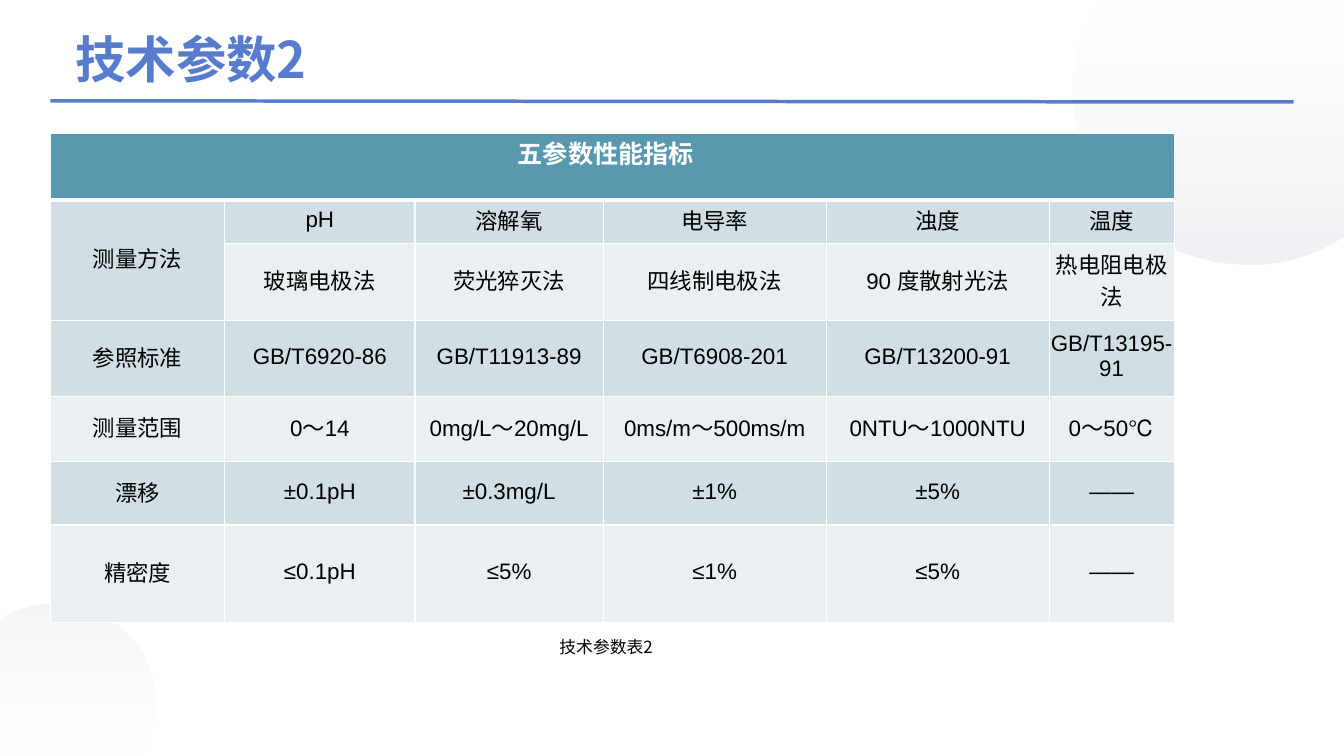
import math

import pptx
import pptx.dml.color
import pptx.enum.shapes
import pptx.enum.text
import pptx.oxml.ns
import pptx.util
from pptx.util import Cm, Pt

TITLE = "技术参数2"
CAPTION = "技术参数表2"
TABLE_HEADING = "五参数性能指标"
PARAMETERS = [
    ("测量方法", "pH", "溶解氧", "电导率", "浊度", "温度"),
    ("", "玻璃电极法", "荧光猝灭法", "四线制电极法", "90 度散射光法", "热电阻电极法"),
    ("参照标准", "GB/T6920-86", "GB/T11913-89", "GB/T6908-201", "GB/T13200-91", "GB/T13195-91"),
    ("测量范围", "0～14", "0mg/L～20mg/L", "0ms/m～500ms/m", "0NTU～1000NTU", "0～50℃"),
    ("漂移", "±0.1pH", "±0.3mg/L", "±1%", "±5%", "——"),
    ("精密度", "≤0.1pH", "≤5%", "≤1%", "≤5%", "——"),
]
COLUMN_WIDTHS = (4.39, 4.8, 4.74, 5.62, 5.62, 3.15)
ROW_HEIGHTS = (1.68, 1.09, 1.94, 1.93, 1.63, 1.6, 2.46)

SLIDE_W, SLIDE_H = 33.87, 19.05
MARGIN = 1.27
BLUE, TEAL, WHITE, BLACK = "577CCE", "5999AF", "FFFFFF", "000000"
BANDS = ("EAEFF2", "D1DEE3")
SANS, CJK = "Arial", "Noto Sans CJK SC"
# centre, radii, arc angles, slide corner, gradient stops (colour, opacity %)
CORNER_DISCS = [
    ((31.44, 2.34), (4.41, 4.33), (56.6, 90, 180, 212.7), (SLIDE_W, 0),
     ((WHITE, 10), ("BEBED2", 24))),
    ((1.4, 17.7), (2.53, 2.48), (236.4, 270, 360, 393), (0, SLIDE_H),
     (("D8D8E4", 24), (WHITE, 10))),
]


def rgb(value):
    return pptx.dml.color.RGBColor.from_string(value)


def add_child(parent, tag, **attributes):
    child = parent.makeelement(pptx.oxml.ns.qn(tag), attributes)
    parent.append(child)
    return child


def format_text(paragraph, size, color, latin=SANS, bold=False):
    for run in paragraph.runs:
        font = run.font
        font.size, font.bold, font.name = Pt(size), bold, latin
        font.color.rgb = rgb(color)
        add_child(run._r.get_or_add_rPr(), "a:ea", typeface=CJK)


def arc_points(centre, radii, angles):
    """Return the start of an arc, then two handles and an end per segment."""
    def place(x, y):
        x, y = centre[0] + radii[0] * x, centre[1] + radii[1] * y
        return Cm(min(max(x, 0), SLIDE_W)), Cm(min(max(y, 0), SLIDE_H))

    turns = [math.radians(angle) for angle in angles]
    points = [place(math.cos(turns[0]), math.sin(turns[0]))]
    for a, b in zip(turns, turns[1:]):
        k = 4 / 3 * math.tan((b - a) / 4)
        points += [
            place(math.cos(a) - k * math.sin(a), math.sin(a) + k * math.cos(a)),
            place(math.cos(b) + k * math.sin(b), math.sin(b) - k * math.cos(b)),
            place(math.cos(b), math.sin(b)),
        ]
    return points


def curve_segments(outline, count):
    """Turn each three leading line segments of an outline into one curve."""
    lines = list(outline.iter(pptx.oxml.ns.qn("a:lnTo")))[:3 * count]
    for i in range(0, len(lines), 3):
        curve = add_child(lines[i].getparent(), "a:cubicBezTo")
        lines[i].addprevious(curve)
        for line in lines[i:i + 3]:
            curve.append(line[0])
            line.getparent().remove(line)


def add_corner_disc(slide, centre, radii, angles, corner, stops):
    """Draw the part of an ellipse that lies inside a corner of the slide."""
    start, *arc = arc_points(centre, radii, angles)
    builder = slide.shapes.build_freeform(*start)
    builder.add_line_segments(arc + [(Cm(corner[0]), Cm(corner[1]))], close=True)
    disc = builder.convert_to_shape()
    curve_segments(disc._element.spPr, len(angles) - 1)
    disc.shadow.inherit = False
    disc.line.fill.background()
    disc.fill.gradient()
    disc.fill.gradient_angle = 270
    for stop, (color, opacity) in zip(disc.fill.gradient_stops, stops):
        stop.color.rgb = rgb(color)
        add_child(stop._gs[0], "a:alpha", val=str(opacity * 1000))


def set_borders(cell, bottom=1):
    """Put white borders around a cell; they precede the fill in the XML."""
    properties = cell._tc.get_or_add_tcPr()
    widths = {"a:lnL": 1, "a:lnR": 1, "a:lnT": 1, "a:lnB": bottom}
    for position, (tag, width) in enumerate(widths.items()):
        border = add_child(properties, tag, w=str(Pt(width)))
        add_child(add_child(border, "a:solidFill"), "a:srgbClr", val=WHITE)
        properties.insert(position, border)


def add_parameter_table(slide):
    rows = [(TABLE_HEADING,) + ("",) * (len(COLUMN_WIDTHS) - 1)] + PARAMETERS
    table = slide.shapes.add_table(
        len(rows), len(COLUMN_WIDTHS), Cm(MARGIN), Cm(3.36),
        Cm(sum(COLUMN_WIDTHS)), Cm(sum(ROW_HEIGHTS))).table
    for column, width in zip(table.columns, COLUMN_WIDTHS):
        column.width = Cm(width)
    for row, height in zip(table.rows, ROW_HEIGHTS):
        row.height = Cm(height)
    for r, values in enumerate(rows):
        heading = r == 0
        for c, value in enumerate(values):
            cell = table.cell(r, c)
            cell.margin_left = cell.margin_top = Cm(0.03)
            cell.margin_right = Cm(0.35 if heading else 0.03)
            cell.margin_bottom = Cm(0.13)
            cell.fill.solid()
            cell.fill.fore_color.rgb = rgb(TEAL if heading else BANDS[r % 2])
            set_borders(cell, bottom=3 if heading else 1)
            cell.text_frame.text = value
            paragraph = cell.text_frame.paragraphs[0]
            paragraph.alignment = pptx.enum.text.PP_ALIGN.CENTER
            if heading:
                paragraph.space_before = Pt(6)
                format_text(paragraph, 18, WHITE, bold=True)
            else:
                cell.vertical_anchor = pptx.enum.text.MSO_ANCHOR.MIDDLE
                format_text(paragraph, 16, BLACK)
    table.cell(0, 0).merge(table.cell(0, len(COLUMN_WIDTHS) - 1))
    table.cell(1, 0).merge(table.cell(2, 0))


def add_title(slide):
    title = slide.shapes.title
    title.left, title.top, title.width, title.height = Cm(1.9), Cm(0.62), Cm(31.32), Cm(1.7)
    frame = title.text_frame
    frame.text = TITLE
    frame.auto_size = pptx.enum.text.MSO_AUTO_SIZE.NONE
    frame.vertical_anchor = pptx.enum.text.MSO_ANCHOR.MIDDLE
    frame.margin_left = frame.margin_right = frame.margin_top = frame.margin_bottom = 0
    frame.paragraphs[0].alignment = pptx.enum.text.PP_ALIGN.LEFT
    format_text(frame.paragraphs[0], 36, BLUE, CJK, bold=True)


def add_title_rule(slide):
    rule = slide.shapes.add_connector(
        pptx.enum.shapes.MSO_CONNECTOR.STRAIGHT,
        Cm(MARGIN), Cm(2.54), Cm(SLIDE_W - MARGIN), Cm(2.57))
    rule.line.color.rgb = rgb(BLUE)
    rule.line.width = Pt(2.5)
    add_child(rule._element.spPr, "a:effectLst")


def add_caption(slide):
    caption = slide.shapes.add_textbox(Cm(13.85), Cm(15.93), Cm(3.18), Cm(0.77))
    frame = caption.text_frame
    frame.word_wrap = True
    frame.auto_size = pptx.enum.text.MSO_AUTO_SIZE.SHAPE_TO_FIT_TEXT
    frame.text = CAPTION
    format_text(frame.paragraphs[0], 12, BLACK, CJK)


def main():
    presentation = pptx.Presentation()
    presentation.slide_width, presentation.slide_height = Cm(SLIDE_W), Cm(SLIDE_H)
    slide = presentation.slides.add_slide(presentation.slide_layouts[5])
    for disc in CORNER_DISCS:
        add_corner_disc(slide, *disc)
    add_title(slide)
    add_title_rule(slide)
    add_parameter_table(slide)
    add_caption(slide)
    presentation.save("out.pptx")


if __name__ == "__main__":
    main()
